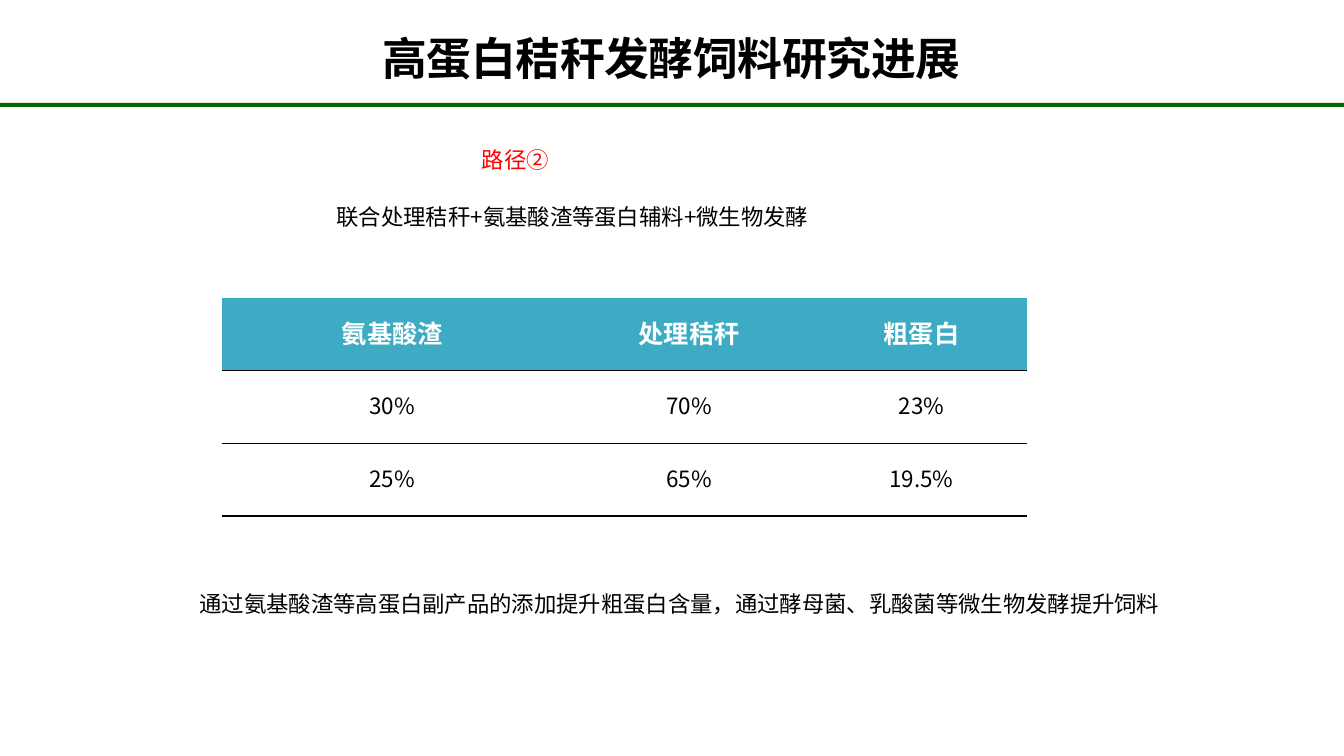
from dataclasses import dataclass

from lxml.etree import SubElement
from pptx import Presentation
from pptx.dml.color import RGBColor
from pptx.enum.shapes import MSO_SHAPE
from pptx.enum.text import MSO_ANCHOR, MSO_AUTO_SIZE, PP_ALIGN
from pptx.oxml import parse_xml
from pptx.oxml.ns import nsdecls, qn
from pptx.util import Inches, Pt

FONT = "Noto Sans CJK SC"
BLACK, WHITE, RED = "000000", "FFFFFF", "FF0000"
GREEN, TEAL = "026701", "3DABC4"
NO_TABLE_STYLE = "{2D5ABB26-0587-4C30-8999-92F81FD0307C}"


@dataclass
class Line:
    text: str
    size: float = 16
    color: str = BLACK
    bold: bool = False
    align: PP_ALIGN = PP_ALIGN.LEFT
    indent: float = 0
    spacing: float = 1.5
    after: float = 0
    tracking: int = 0


@dataclass
class Block:
    left: float
    top: float
    width: float
    height: float
    lines: list[Line]
    inset: bool = True
    grow: bool = False


def rgb(color: str) -> RGBColor:
    return RGBColor.from_string(color)


def write_line(paragraph, line: Line) -> None:
    paragraph.alignment = line.align
    paragraph.line_spacing = line.spacing
    paragraph.space_after = Pt(line.after)
    if line.indent:
        properties = paragraph._p.get_or_add_pPr()
        properties.set("marL", str(Inches(line.indent)))
        properties.set("indent", "0")
    run = paragraph.add_run()
    run.text = line.text
    font = run.font
    font.size, font.bold, font.name = Pt(line.size), line.bold, FONT
    font.color.rgb = rgb(line.color)
    run_properties = run._r.get_or_add_rPr()
    SubElement(run_properties, qn("a:ea"), typeface=FONT)
    if line.tracking:
        run_properties.set("spc", str(line.tracking))


def draw_block(slide, block: Block) -> None:
    box = slide.shapes.add_textbox(
        Inches(block.left), Inches(block.top), Inches(block.width), Inches(block.height))
    frame = box.text_frame
    frame.word_wrap = True
    if block.grow:
        frame.auto_size = MSO_AUTO_SIZE.SHAPE_TO_FIT_TEXT
    if not block.inset:
        frame.margin_left = frame.margin_right = 0
        frame.margin_top = frame.margin_bottom = 0
    for index, line in enumerate(block.lines):
        write_line(frame.add_paragraph() if index else frame.paragraphs[0], line)


def add_rule(cell, edge: str) -> None:
    cell._tc.get_or_add_tcPr().insert(0, parse_xml(
        f'<a:{edge} {nsdecls("a")} w="{Pt(1)}"><a:solidFill>'
        f'<a:srgbClr val="{BLACK}"/></a:solidFill></a:{edge}>'))


def draw_table(slide, rows: list[list[str]], widths: list[float], row_height: float) -> None:
    table = slide.shapes.add_table(
        len(rows), len(widths), Inches(2.2), Inches(2.96),
        Inches(sum(widths)), Inches(row_height * len(rows))).table
    table.horz_banding = False
    table._tbl.tblPr.find(qn("a:tableStyleId")).text = NO_TABLE_STYLE
    for column, width in zip(table.columns, widths):
        column.width = Inches(width)
    for r, values in enumerate(rows):
        table.rows[r].height = Inches(row_height)
        header = r == 0
        for c, value in enumerate(values):
            cell = table.cell(r, c)
            cell.vertical_anchor = MSO_ANCHOR.MIDDLE
            cell.margin_left = cell.margin_right = cell.margin_top = Inches(0.01)
            cell.margin_bottom = Inches(0.05)
            write_line(cell.text_frame.paragraphs[0], Line(
                value, size=18 if header else 16, color=WHITE if header else BLACK,
                bold=header, align=PP_ALIGN.CENTER, spacing=1.0))
            if header:
                cell.fill.solid()
                cell.fill.fore_color.rgb = rgb(TEAL)
            else:
                cell.fill.background()
            if r == 1:
                add_rule(cell, "lnT")
            if r in (0, len(rows) - 1):
                add_rule(cell, "lnB")


def main() -> None:
    presentation = Presentation()
    presentation.slide_width, presentation.slide_height = Inches(13.33), Inches(7.5)
    slide = presentation.slides.add_slide(presentation.slide_layouts[6])

    # Route heading and formula
    draw_block(slide, Block(1.05, 1.27, 10.5, 1.42, [
        Line("路径②", color=RED, indent=3.63, after=12),
        Line("联合处理秸秆+氨基酸渣等蛋白辅料+微生物发酵", indent=2.19, after=12),
    ]))

    # Mixing ratios and protein content
    draw_table(slide, [
        ["氨基酸渣", "处理秸秆", "粗蛋白"],
        ["30%", "70%", "23%"],
        ["25%", "65%", "19.5%"],
    ], widths=[3.38, 2.51, 2.1], row_height=0.72)

    # Conclusion
    draw_block(slide, Block(1.88, 5.67, 10.09, 0.5, [
        Line("通过氨基酸渣等高蛋白副产品的添加提升粗蛋白含量，"
             "通过酵母菌、乳酸菌等微生物发酵提升饲料", after=6),
    ], grow=True))

    # Green bar under the title
    title_bar = slide.shapes.add_shape(
        MSO_SHAPE.RECTANGLE, 0, Inches(1.02), presentation.slide_width, Inches(0.04))
    title_bar.shadow.inherit = False
    title_bar.fill.solid()
    title_bar.fill.fore_color.rgb = rgb(GREEN)
    title_bar.line.fill.background()

    # Title
    draw_block(slide, Block(0.31, 0.36, 12.69, 0.51, [
        Line("高蛋白秸秆发酵饲料研究进展", size=32, bold=True, align=PP_ALIGN.CENTER,
             indent=0.01, spacing=0.91, tracking=-30),
    ], inset=False))

    presentation.save("out.pptx")


if __name__ == "__main__":
    main()
